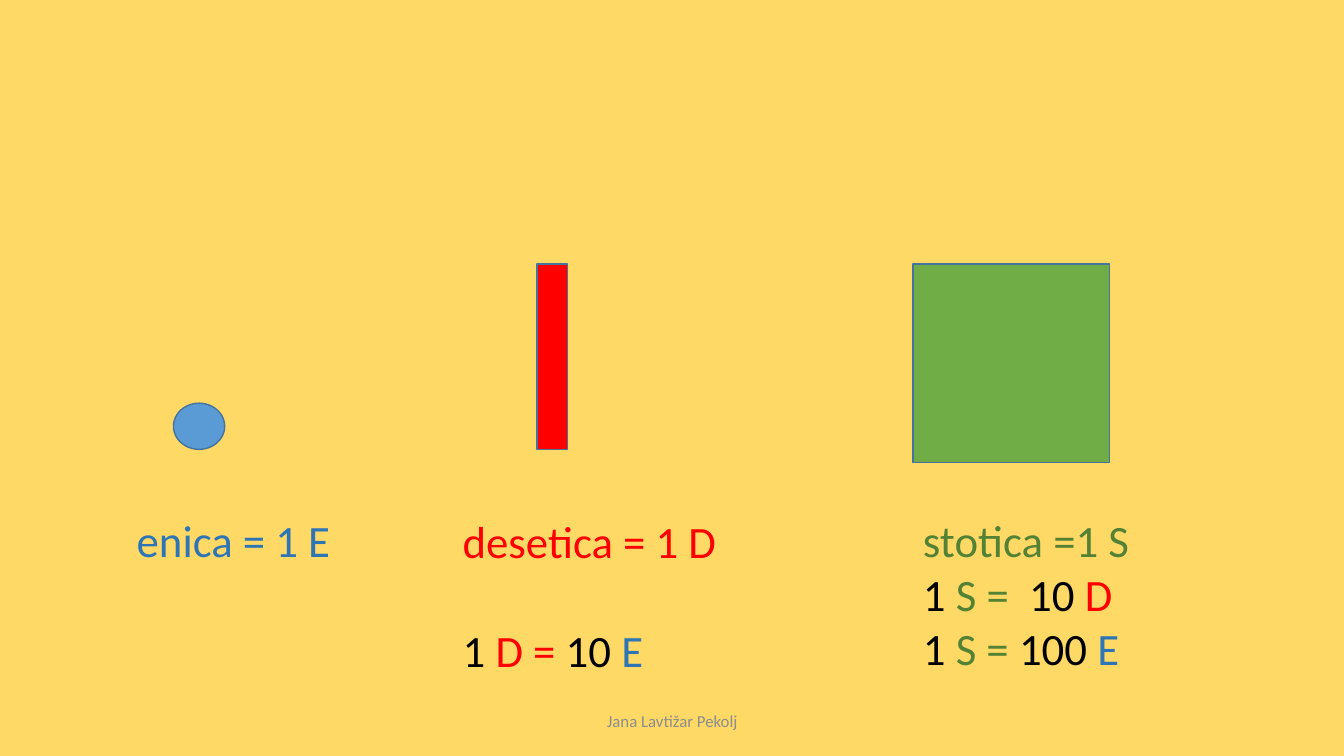
from dataclasses import dataclass

from pptx import Presentation
from pptx import util as u
from pptx.dml.color import RGBColor
from pptx.enum import shapes, text

# Slide grid: 32 columns by 18 rows of square cells
COLUMNS, ROWS = 32, 18
CELL = u.Inches(7.5) // ROWS
FONT = "Calibri"
COLOURS = {
    "background": "FFD966",
    "outline": "43739E",
    "unit": "5B9BD5",
    "ten": "FF0000",
    "hundred": "70AD47",
    "unit text": "2E75B6",
    "hundred text": "548235",
    "number": "000000",
    "footer": "8C8C8C",
}


@dataclass(frozen=True)
class Box:
    column: float
    row: float
    columns: float
    rows: float

    def lengths(self) -> list[int]:
        return [round(cells * CELL) for cells in (self.column, self.row, self.columns, self.rows)]


@dataclass(frozen=True)
class Counter:
    kind: shapes.MSO_SHAPE
    box: Box
    colour: str


@dataclass(frozen=True)
class Line:
    runs: tuple[tuple[str, str], ...]  # wording and colour name
    space_before: float = 0


@dataclass(frozen=True)
class Label:
    box: Box
    lines: tuple[Line, ...]
    size: int = 32
    alignment: text.PP_ALIGN = text.PP_ALIGN.LEFT
    anchor: text.MSO_ANCHOR = text.MSO_ANCHOR.TOP


COUNTERS = (
    Counter(shapes.MSO_SHAPE.FLOWCHART_CONNECTOR, Box(4.13, 9.6, 1.22, 1.1), "unit"),
    Counter(shapes.MSO_SHAPE.RECTANGLE, Box(12.79, 6.29, 0.72, 4.42), "ten"),
    Counter(shapes.MSO_SHAPE.RECTANGLE, Box(21.74, 6.29, 4.68, 4.73), "hundred"),
)

LABELS = (
    Label(Box(3.02, 12.1, 6.07, 1.54), (Line((("enica = 1 E", "unit text"),)),)),
    Label(
        Box(10.78, 12.12, 8.78, 4.13),
        (
            Line((("desetica = 1 D", "ten"),)),
            Line(
                (("1", "number"), (" D = ", "ten"), ("10 ", "number"), ("E", "unit text")),
                space_before=39,
            ),
        ),
    ),
    Label(
        Box(21.74, 12.1, 7.54, 4.13),
        (
            Line((("stotica =1 S", "hundred text"),)),
            Line((("1", "number"), (" S =  ", "hundred text"), ("10 ", "number"), ("D", "ten"))),
            Line((("1 ", "number"), ("S = ", "hundred text"), ("100 ", "number"), ("E", "unit text"))),
        ),
    ),
    Label(
        Box(10.61, 16.68, 10.8, 0.96),
        (Line((("Jana Lavtižar Pekolj", "footer"),)),),
        size=12,
        alignment=text.PP_ALIGN.CENTER,
        anchor=text.MSO_ANCHOR.MIDDLE,
    ),
)


def colour(name: str) -> RGBColor:
    return RGBColor.from_string(COLOURS[name])


def draw_counter(slide, counter: Counter) -> None:
    shape = slide.shapes.add_shape(counter.kind, *counter.box.lengths())
    shape.shadow.inherit = False
    shape.fill.solid()
    shape.fill.fore_color.rgb = colour(counter.colour)
    shape.line.color.rgb = colour("outline")
    shape.line.width = u.Pt(1)


def draw_label(slide, label: Label) -> None:
    frame = slide.shapes.add_textbox(*label.box.lengths()).text_frame
    frame.word_wrap = True
    frame.vertical_anchor = label.anchor
    for index, line in enumerate(label.lines):
        paragraph = frame.add_paragraph() if index else frame.paragraphs[0]
        paragraph.alignment = label.alignment
        paragraph.space_before = u.Pt(line.space_before)
        paragraph.font.name = FONT
        paragraph.font.size = u.Pt(label.size)
        for wording, colour_name in line.runs:
            run = paragraph.add_run()
            run.text = wording
            run.font.color.rgb = colour(colour_name)


def main() -> None:
    presentation = Presentation()
    presentation.slide_width = COLUMNS * CELL
    presentation.slide_height = ROWS * CELL
    slide = presentation.slides.add_slide(presentation.slide_layouts[6])

    # Background
    slide.background.fill.solid()
    slide.background.fill.fore_color.rgb = colour("background")

    # Counters, with their labels and the footer below
    for counter in COUNTERS:
        draw_counter(slide, counter)
    for label in LABELS:
        draw_label(slide, label)

    presentation.save("out.pptx")


if __name__ == "__main__":
    main()
